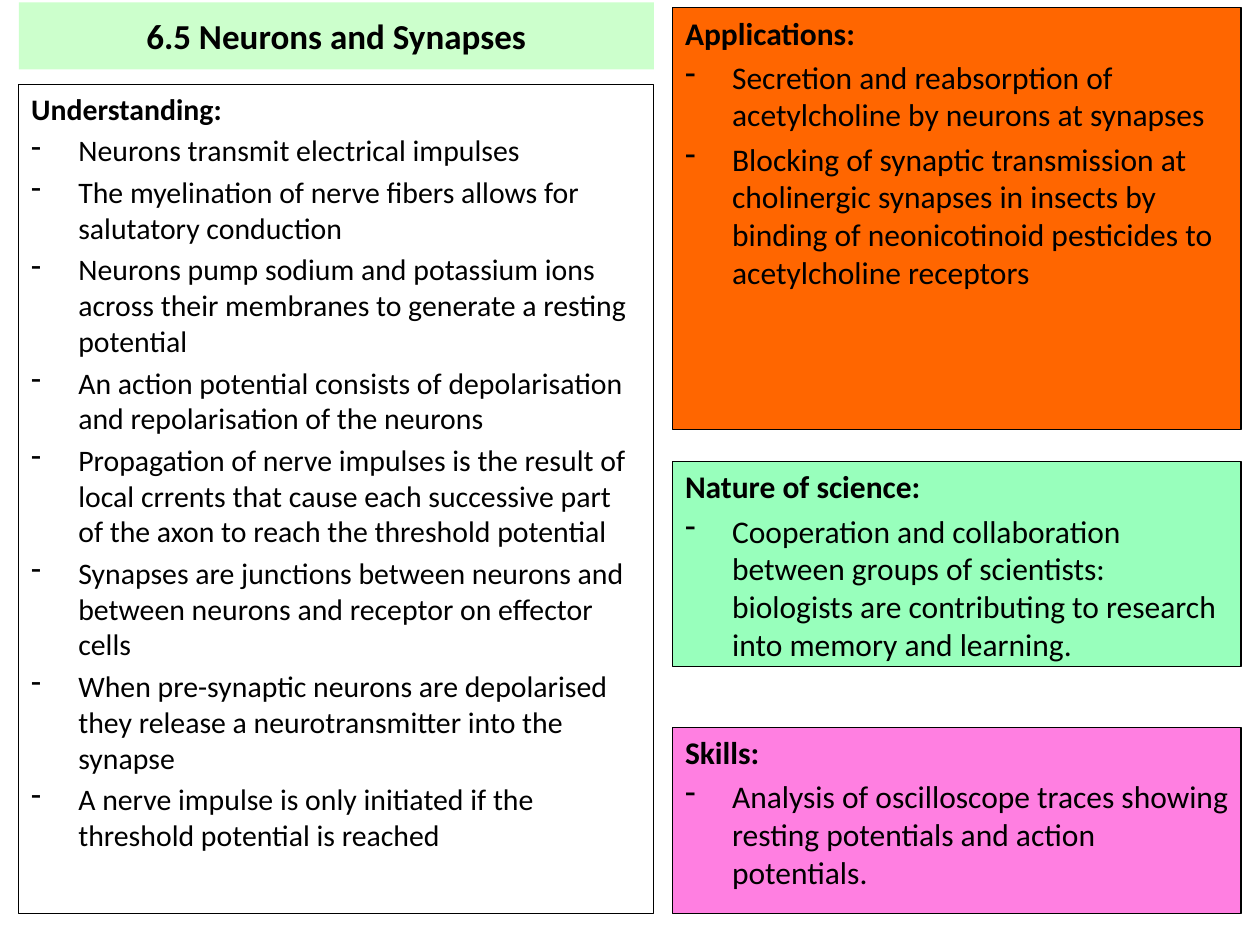
from dataclasses import dataclass

from lxml import etree
from pptx import Presentation
from pptx import util as u
from pptx.dml import color
from pptx.enum import shapes, text
from pptx.oxml import ns


@dataclass(frozen=True)
class Theme:
    font: str = "Calibri"
    ink: str = "000000"
    title_fill: str = "CCFFCC"
    applications: str = "FF6600"
    nature: str = "98FFBC"
    skills: str = "FF7FE1"
    title_size: int = 20
    body_size: int = 17
    panel_size: int = 18
    line_width: float = 0.75
    spacing: float = 0.2


THEME = Theme()
INDENT = u.Cm(0.95)
LEFT_COLUMN = (0.38, 12.8)
RIGHT_COLUMN = (13.56, 11.46)

UNDERSTANDING = [
    "Neurons transmit electrical impulses",
    "The myelination of nerve fibers allows for salutatory conduction",
    "Neurons pump sodium and potassium ions across their membranes to generate a resting potential",
    "An action potential consists of depolarisation and repolarisation of the neurons",
    "Propagation of nerve impulses is the result of local crrents that cause each successive part "
    "of the axon to reach the threshold potential",
    "Synapses are junctions between neurons and between neurons and receptor on effector cells",
    "When pre-synaptic neurons are depolarised they release a neurotransmitter into the synapse",
    "A nerve impulse is only initiated if the threshold potential is reached",
]
APPLICATIONS = [
    "Secretion and reabsorption of acetylcholine by neurons at synapses",
    "Blocking of synaptic transmission at cholinergic synapses in insects by binding of "
    "neonicotinoid pesticides to acetylcholine receptors",
]
NATURE = [
    "Cooperation and collaboration between groups of scientists: biologists are contributing "
    "to research into memory and learning.",
]
SKILLS = [
    "Analysis of oscilloscope traces showing resting potentials and action potentials.",
]

PANELS = [
    ("Understanding:", UNDERSTANDING, LEFT_COLUMN, 1.7, 16.71, None, THEME.body_size),
    ("Applications:", APPLICATIONS, RIGHT_COLUMN, 0.15, 8.51, THEME.applications, THEME.panel_size),
    ("Nature of science:", NATURE, RIGHT_COLUMN, 9.3, 4.14, THEME.nature, THEME.panel_size),
    ("Skills:", SKILLS, RIGHT_COLUMN, 14.66, 3.76, THEME.skills, THEME.panel_size),
]


def apply_format(target, values):
    for name, value in values.items():
        setattr(target, name, value)


def rgb(value):
    return color.RGBColor.from_string(value)


def set_fill(shape, value):
    if value is None:
        shape.fill.background()
    else:
        shape.fill.solid()
        shape.fill.fore_color.rgb = rgb(value)


def add_text(paragraph, wording, size, bold):
    run = paragraph.add_run()
    run.text = wording
    apply_format(run.font, {"name": THEME.font, "size": u.Pt(size), "bold": bold})
    run.font.color.rgb = rgb(THEME.ink)


def add_dash(paragraph):
    properties = paragraph._p.get_or_add_pPr()
    properties.set("marL", str(INDENT))
    properties.set("indent", str(-INDENT))
    etree.SubElement(properties, ns.qn("a:buChar"), char="-")


def add_title(slide, wording):
    title = slide.shapes.title
    left, width = LEFT_COLUMN
    apply_format(title, {
        "left": u.Cm(left), "top": u.Cm(0.05),
        "width": u.Cm(width), "height": u.Cm(1.35),
    })
    set_fill(title, THEME.title_fill)
    apply_format(title.text_frame, {
        "word_wrap": True,
        "auto_size": text.MSO_AUTO_SIZE.NONE,
        "vertical_anchor": text.MSO_ANCHOR.MIDDLE,
    })
    paragraph = title.text_frame.paragraphs[0]
    paragraph.alignment = text.PP_ALIGN.CENTER
    add_text(paragraph, wording, THEME.title_size, True)


def add_panel(slide, heading, points, column, top, height, fill, size):
    left, width = column
    panel = slide.shapes.add_shape(
        shapes.MSO_SHAPE.RECTANGLE, u.Cm(left), u.Cm(top), u.Cm(width), u.Cm(height))
    panel.shadow.inherit = False
    set_fill(panel, fill)
    panel.line.color.rgb = rgb(THEME.ink)
    panel.line.width = u.Pt(THEME.line_width)
    frame = panel.text_frame
    apply_format(frame, {"word_wrap": True, "vertical_anchor": text.MSO_ANCHOR.TOP})
    for index, wording in enumerate([heading, *points]):
        paragraph = frame.add_paragraph() if index else frame.paragraphs[0]
        apply_format(paragraph, {
            "alignment": text.PP_ALIGN.LEFT,
            "space_before": u.Pt(size * THEME.spacing),
        })
        if index:
            add_dash(paragraph)
        add_text(paragraph, wording, size, index == 0)


def main():
    presentation = Presentation()
    presentation.slide_width = u.Cm(25.4)
    presentation.slide_height = u.Cm(19.05)
    slide = presentation.slides.add_slide(presentation.slide_layouts.get_by_name("Title Only"))
    add_title(slide, "6.5 Neurons and Synapses")
    for panel in PANELS:
        add_panel(slide, *panel)
    presentation.save("out.pptx")


if __name__ == "__main__":
    main()
